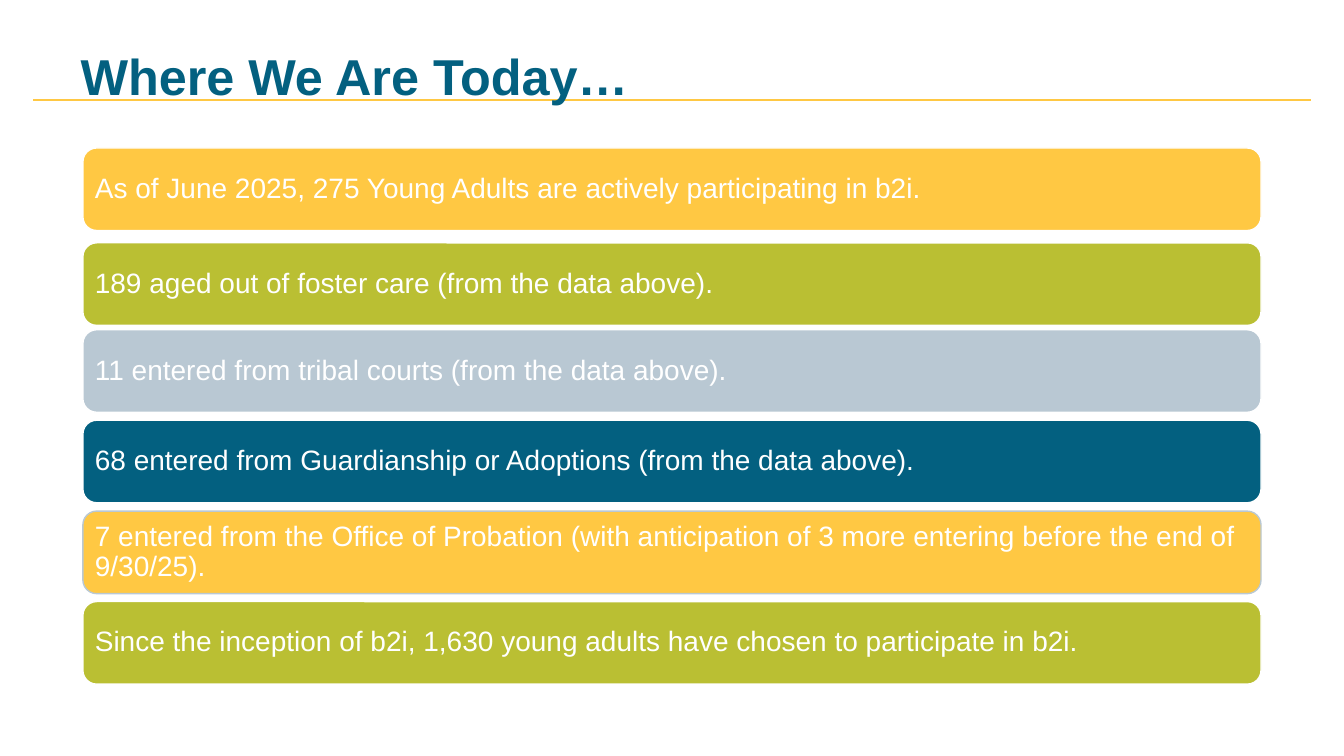
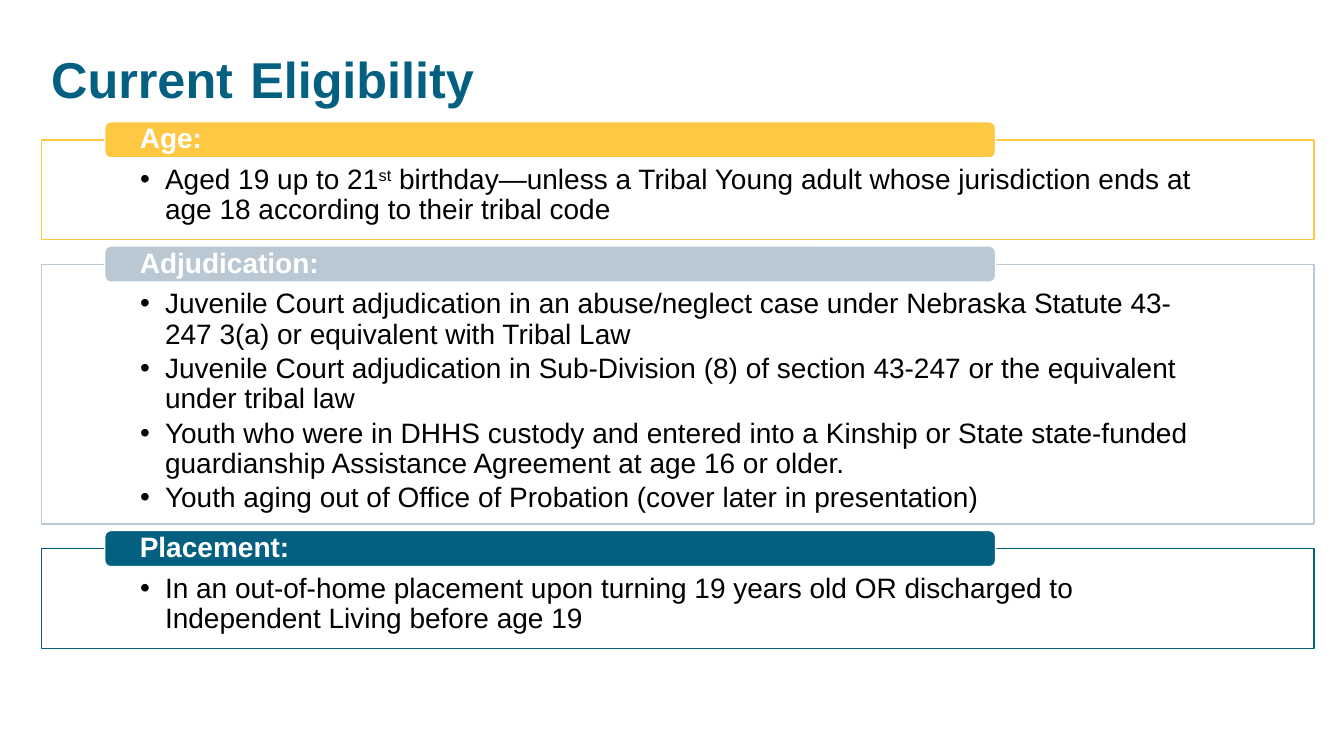
from lxml.etree import SubElement
from pptx import Presentation
from pptx.dml.color import RGBColor
from pptx.enum.shapes import MSO_CONNECTOR, MSO_SHAPE
from pptx.enum.text import MSO_ANCHOR, PP_ALIGN
from pptx.oxml.ns import qn
from pptx.util import Cm, Pt

GOLD = RGBColor(0xFF, 0xC8, 0x43)
LIME = RGBColor(0xBA, 0xBF, 0x33)
MIST = RGBColor(0xB9, 0xC8, 0xD3)
TEAL = RGBColor(0x03, 0x60, 0x80)
WHITE = RGBColor(0xFF, 0xFF, 0xFF)
BLACK = RGBColor(0x00, 0x00, 0x00)
FONT = "Arial"


def add_panel(page, preset, left, top, width, height, fill, line):
    panel = page.shapes.add_shape(preset, Cm(left), Cm(top), Cm(width), Cm(height))
    panel.shadow.inherit = False
    panel.fill.solid()
    panel.fill.fore_color.rgb = fill
    panel.line.color.rgb = line
    panel.line.width = Pt(1)
    panel.text_frame.word_wrap = True
    panel.text_frame.vertical_anchor = MSO_ANCHOR.MIDDLE
    return panel


def add_spans(paragraph, texts, size, colour, bold=False):
    paragraph.alignment = PP_ALIGN.LEFT
    paragraph.line_spacing = 0.9
    for text in texts:
        span = paragraph.add_run()
        span.text = text
        span.font.name = FONT
        span.font.size = Pt(size)
        span.font.bold = bold
        span.font.color.rgb = colour
    return paragraph.runs


deck = Presentation()
deck.slide_width = Cm(33.87)
deck.slide_height = Cm(19.05)
today_page, eligibility_page = [
    deck.slides.add_slide(deck.slide_layouts[6]) for _ in range(2)
]

rule = today_page.shapes.add_connector(
    MSO_CONNECTOR.STRAIGHT, Cm(0.84), Cm(2.52), Cm(33.05), Cm(2.52)
)
rule.line.color.rgb = GOLD
rule.line.width = Pt(1.5)
SubElement(rule._element.spPr, qn("a:effectLst"))

titles = [
    (today_page, 1.78, ["Where We Are Today…"]),
    (eligibility_page, 1.04, ["Current", " ", "Eligibility"]),
]
for page, left, words in titles:
    box = page.shapes.add_textbox(
        Cm(left), Cm(1.02), deck.slide_width - Cm(left), Cm(1.93)
    )
    box.text_frame.word_wrap = True
    box.text_frame.vertical_anchor = MSO_ANCHOR.MIDDLE
    for span in add_spans(box.text_frame.paragraphs[0], words, 36, TEAL, True):
        if span.text == " ":
            span.font.size = Pt(44)

facts = [
    (3.73, GOLD, WHITE, "As of June 2025, 275 Young Adults are actively participating in b2i."),
    (6.12, LIME, WHITE, "189 aged out of foster care (from the data above)."),
    (8.31, MIST, WHITE, "11 entered from tribal courts (from the data above)."),
    (10.59, TEAL, WHITE, "68 entered from Guardianship or Adoptions (from the data above)."),
    (12.88, GOLD, MIST, "7 entered from the Office of Probation (with anticipation of 3 more "
                        "entering before the end of 9/30/25)."),
    (15.16, LIME, WHITE, "Since the inception of b2i, 1,630 young adults have chosen to "
                         "participate in b2i."),
]
for top, fill, line, text in facts:
    bar = add_panel(
        today_page, MSO_SHAPE.ROUNDED_RECTANGLE, 2.09, top, 29.69, 2.08, fill, line
    )
    frame = bar.text_frame
    frame.margin_left = frame.margin_right = Cm(0.2)
    frame.margin_top = frame.margin_bottom = Cm(0.2)
    add_spans(frame.paragraphs[0], [text], 20, WHITE)

sections = [
    ("Age:", GOLD, 2.51, [
        ["Aged 19 up to 21", "st", " birthday—unless a Tribal Young adult whose "
         "jurisdiction ends at age 18 according to their tribal code"],
    ]),
    ("Adjudication:", MIST, 6.55, [
        ["Juvenile Court adjudication in an abuse/neglect case under Nebraska Statute "
         "43-247 3(a) or equivalent with Tribal Law"],
        ["Juvenile Court adjudication in Sub-Division (8) of section 43-247 or the "
         "equivalent under tribal law"],
        ["Youth who were in DHHS custody and entered into a Kinship or State "
         "state-funded guardianship Assistance Agreement at age 16 or older."],
        ["Youth aging out of Office of Probation (cover later in presentation)"],
    ]),
    ("Placement:", TEAL, 2.51, [
        ["In an out-of-home placement upon turning 19 years old OR discharged to "
         "Independent Living before age 19"],
    ]),
]
top = 3.53
for heading, colour, height, bullets in sections:
    body = add_panel(
        eligibility_page, MSO_SHAPE.RECTANGLE, 1.04, top, 32.08, height, WHITE, colour
    )
    frame = body.text_frame
    frame.vertical_anchor = MSO_ANCHOR.TOP
    frame.margin_left = frame.margin_right = Cm(2.49)
    frame.margin_top = Cm(0.64)
    frame.margin_bottom = Cm(0.4)
    for index, texts in enumerate(bullets):
        paragraph = frame.add_paragraph() if index else frame.paragraphs[0]
        properties = paragraph._p.get_or_add_pPr()
        properties.set("marL", str(Cm(0.63)))
        properties.set("indent", str(-Cm(0.63)))
        SubElement(properties, qn("a:buFont"), typeface=FONT)
        SubElement(properties, qn("a:buChar"), char="•")
        paragraph.space_after = Pt(3)
        for span in add_spans(paragraph, texts, 20, BLACK):
            if span.text == "st":
                span.font._element.set("baseline", "30000")

    tab = add_panel(
        eligibility_page, MSO_SHAPE.ROUNDED_RECTANGLE, 2.64, top - 0.46, 22.45, 0.91,
        colour, WHITE,
    )
    frame = tab.text_frame
    frame.margin_left = frame.margin_right = Cm(0.84)
    frame.margin_top = frame.margin_bottom = 0
    add_spans(frame.paragraphs[0], [heading], 20, WHITE, True)
    top += height + 0.62

deck.save("out.pptx")
